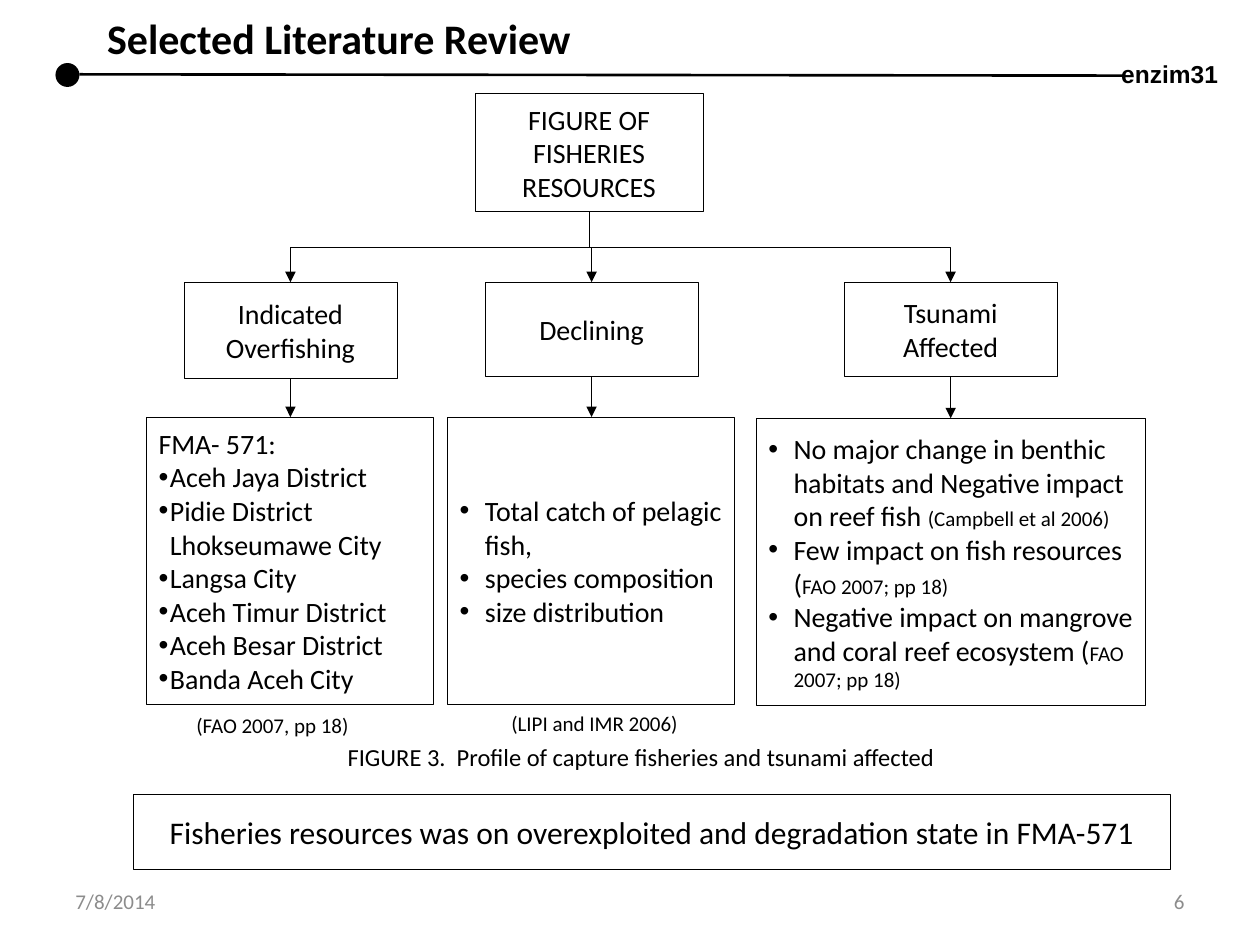
from lxml.etree import SubElement
from pptx import Presentation
from pptx.dml.color import RGBColor
from pptx.enum.shapes import MSO_CONNECTOR as LINK, MSO_SHAPE as SHAPE
from pptx.enum.text import MSO_ANCHOR as ANCHOR, MSO_AUTO_SIZE as FIT, PP_ALIGN as ALIGN
from pptx.oxml.ns import qn
from pptx.util import Inches, Pt

COLORS = {"ink": "000000", "muted": "8C8C8C"}

BRANCHES = [
    {
        "heading": "Indicated Overfishing",
        "heading_box": (1.46, 2.24, 1.69, 0.76),
        "detail_box": (1.16, 3.31, 2.28, 2.28),
        "intro": ["FMA- 571:"],
        "indent": 0.09,
        "items": ["Aceh Jaya District", "Pidie District Lhokseumawe City", "Langsa City",
                  "Aceh Timur District", "Aceh Besar District", "Banda Aceh City"],
        "source": ("(FAO 2007, pp 18)", (1.46, 5.61, 1.43, 0.3)),
    },
    {
        "heading": "Declining",
        "heading_box": (3.85, 2.24, 1.69, 0.75),
        "detail_box": (3.55, 3.31, 2.28, 2.28),
        "items": ["Total catch of pelagic fish,", "species composition", "size distribution"],
        "source": ("(LIPI and IMR 2006)", (3.96, 5.59, 1.54, 0.3)),
    },
    {
        "heading": "Tsunami Affected",
        "heading_box": (6.7, 2.24, 1.69, 0.75),
        "detail_box": (6, 3.32, 3.09, 2.28),
        "items": [
            ("No major change in benthic habitats and Negative impact on reef fish ",
             "(Campbell et al 2006)"),
            ("Few impact on fish resources (", "FAO 2007; pp 18)"),
            ("Negative impact on mangrove and coral reef ecosystem (", "FAO 2007; pp 18)"),
        ],
    },
]


def write(shape, paragraphs, size=16, font="Calibri", color="ink", bold=False,
          align=ALIGN.LEFT, anchor=ANCHOR.MIDDLE, wrap=True, plain=0, indent=None):
    """Fill a shape with paragraphs; those after the plain ones get bullets if indent is set."""
    frame = shape.text_frame
    frame.auto_size, frame.word_wrap, frame.vertical_anchor = FIT.NONE, wrap, anchor
    for index, parts in enumerate(paragraphs):
        para = frame.paragraphs[0] if index == 0 else frame.add_paragraph()
        para.alignment = align
        if indent and index >= plain:
            props = para._p.get_or_add_pPr()
            props.set("marL", str(Inches(indent)))
            props.set("indent", str(-Inches(indent)))
            SubElement(props, qn("a:buFont")).set("typeface", "Arial")
            SubElement(props, qn("a:buChar")).set("char", "•")
        parts = (parts,) if isinstance(parts, str) else parts
        for text, points in zip(parts, (size, 12)):
            span = para.add_run()
            span.text = text
            span.font.size, span.font.name, span.font.bold = Pt(points), font, bold
            span.font.color.rgb = RGBColor.from_string(COLORS[color])


def add_label(page, box, text, **style):
    """Place a single line of text without a frame."""
    label = page.shapes.add_textbox(*map(Inches, box))
    write(label, [text], **{"wrap": False, "anchor": ANCHOR.TOP, **style})


def add_panel(page, box, paragraphs, **style):
    """Place an outlined rectangle with text."""
    panel = page.shapes.add_shape(SHAPE.RECTANGLE, *map(Inches, box))
    panel.shadow.inherit = False
    panel.fill.background()
    panel.line.color.rgb = RGBColor.from_string(COLORS["ink"])
    panel.line.width = Pt(0.25)
    write(panel, paragraphs, **style)


def add_line(page, start, end, kind=LINK.STRAIGHT, width=0.25, arrow=True):
    """Draw a connector between two points."""
    line = page.shapes.add_connector(kind, *map(Inches, (*start, *end)))
    line.line.color.rgb = RGBColor.from_string(COLORS["ink"])
    line.line.width = Pt(width)
    if arrow:
        SubElement(line.line._get_or_add_ln(), qn("a:tailEnd")).set("type", "triangle")
    SubElement(line._element.spPr, qn("a:effectLst"))
    return line


def add_elbow(page, start, end):
    """Draw a bent arrow that leaves downwards, turns sideways and arrives downwards."""
    (x1, y1), (x2, y2) = start, end
    mid_x, mid_y = (x1 + x2) / 2, (y1 + y2) / 2
    side = 1 if x2 < x1 else -1
    reach, half = side * (y2 - y1) / 2, abs(x2 - x1) / 2
    elbow = add_line(page, (mid_x - reach, mid_y - half), (mid_x + reach, mid_y + half), LINK.ELBOW)
    elbow._element.spPr.find(qn("a:xfrm")).set("rot", str((90 if side > 0 else 270) * 60000))


def add_header(page, left, top):
    """Place the title, the rule with its dot and the name at its end."""
    title = page.shapes.title
    title.left, title.top, title.width, title.height = map(Inches, (left + 0.31, top, 3.92, 0.5))
    write(title, ["Selected Literature Review"], size=24, bold=True, wrap=False, anchor=ANCHOR.TOP)
    add_line(page, (left + 0.19, top + 0.54), (left + 8.49, top + 0.55), width=1.5, arrow=False)
    dot = page.shapes.add_shape(SHAPE.OVAL, *map(Inches, (left, top + 0.45, 0.19, 0.19)))
    dot.shadow.inherit = False
    dot.fill.solid()
    dot.fill.fore_color.rgb = RGBColor.from_string(COLORS["ink"])
    dot.line.fill.background()
    add_label(page, (left + 8.36, top + 0.37, 0.98, 0.34), "enzim31", size=14, font="Arial", bold=True)


def add_branch(page, root, branch):
    """Place one heading with its detail panel, source and arrows."""
    left, top, width, height = branch["heading_box"]
    center, detail_top = left + width / 2, branch["detail_box"][1]
    intro = branch.get("intro", [])
    add_panel(page, branch["heading_box"], [branch["heading"]], align=ALIGN.CENTER)
    add_panel(page, branch["detail_box"], intro + branch["items"],
              plain=len(intro), indent=branch.get("indent", 0.2))
    add_elbow(page, root, (center, top))
    add_line(page, (center, top + height), (center, detail_top))
    if "source" in branch:
        text, box = branch["source"]
        add_label(page, box, text, size=12)


def add_tree(page, box):
    """Place the root panel in its box and the branches below it."""
    left, top, width, height = box
    add_panel(page, box, ["FIGURE OF FISHERIES RESOURCES"], align=ALIGN.CENTER)
    for branch in BRANCHES:
        add_branch(page, (left + width / 2, top + height), branch)


def add_footer(page, left, top, width):
    """Place the date and the page number at the two ends of the footer."""
    style = {"size": 12, "color": "muted", "anchor": ANCHOR.MIDDLE, "wrap": True}
    add_label(page, (left, top, 2.33, 0.4), "7/8/2014", **style)
    add_label(page, (left + width - 2.33, top, 2.33, 0.4), "6", align=ALIGN.RIGHT, **style)


def main():
    """Build the slide and save the deck."""
    deck = Presentation()
    deck.slide_width, deck.slide_height = Inches(10), Inches(7.5)
    page = deck.slides.add_slide(deck.slide_layouts[5])
    add_header(page, 0.44, 0.05)
    add_tree(page, (3.77, 0.74, 1.81, 0.94))
    add_label(page, (2.66, 5.84, 4.95, 0.34),
              "FIGURE 3.  Profile of capture fisheries and tsunami affected", size=14)
    add_panel(page, (1.06, 6.3, 8.23, 0.6),
              ["Fisheries resources was on overexploited and degradation state in FMA-571"],
              size=18, align=ALIGN.CENTER)
    add_footer(page, 0.5, 6.95, 9)
    deck.save("out.pptx")


if __name__ == "__main__":
    main()
